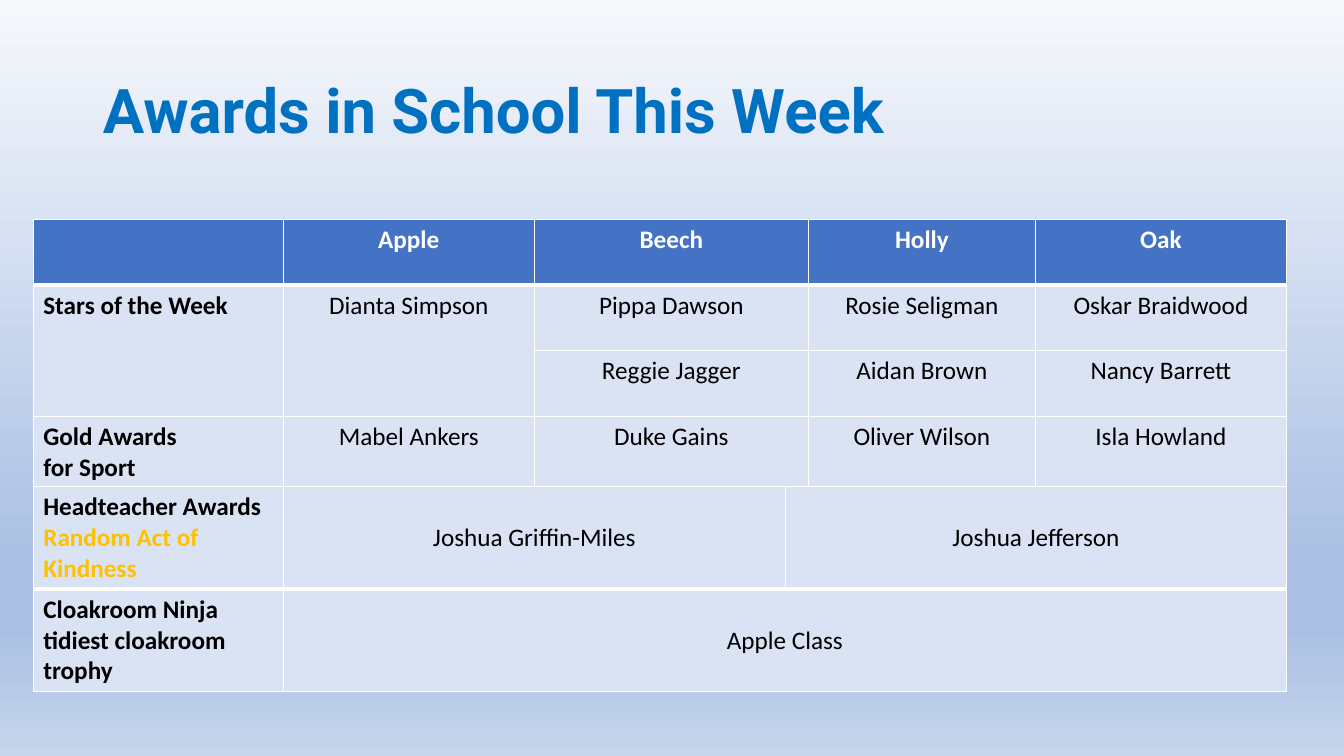
from copy import deepcopy

from lxml.etree import SubElement
from pptx import Presentation
from pptx.dml.color import RGBColor
from pptx.enum.text import MSO_ANCHOR, PP_ALIGN
from pptx.oxml.ns import qn
from pptx.util import Inches, Pt


class Theme:
    title_font, body_font = "Roboto", "Calibri"
    title_size, body_size = Pt(44), Pt(18)
    title, header, body = "0070C0", "4472C4", "DAE3F3"
    text, accent, white = "000000", "FFC000", "FFFFFF"
    background = [(0, "F6F8FC"), (0.74, "ABC0E4"), (0.83, "ABC0E4"), (1, "C7D5ED")]


def add_grid(slide, top, column_widths, row_heights):
    """Add an unbanded table at the shared left edge."""
    frame = slide.shapes.add_table(
        len(row_heights), len(column_widths), Inches(0.33), Inches(top),
        Inches(sum(column_widths)), Inches(sum(row_heights)))
    table = frame.table
    table.horz_banding = False
    for column, width in zip(table.columns, column_widths):
        column.width = Inches(width)
    for row, height in zip(table.rows, row_heights):
        row.height = Inches(height)
    return table


def format_cell(cell, text, fill, color, bold, centered, bottom_width=1):
    """Write the text of a cell and set its borders, fill and font."""
    properties = cell._tc.get_or_add_tcPr()
    for side, width in (("L", 1), ("R", 1), ("T", 1), ("B", bottom_width)):
        line = SubElement(properties, qn(f"a:ln{side}"), w=str(Pt(width)))
        line_fill = SubElement(line, qn("a:solidFill"))
        SubElement(line_fill, qn("a:srgbClr"), val=Theme.white)
    cell.fill.solid()
    cell.fill.fore_color.rgb = RGBColor.from_string(fill)
    cell.text = text
    for paragraph in cell.text_frame.paragraphs:
        paragraph.alignment = PP_ALIGN.CENTER if centered else PP_ALIGN.LEFT
        paragraph.font.name = Theme.body_font
        paragraph.font.size = Theme.body_size
        paragraph.font.bold = bold
        paragraph.font.color.rgb = RGBColor.from_string(color)


presentation = Presentation()
presentation.slide_width = Inches(13.33)
presentation.slide_height = Inches(7.5)
slide = presentation.slides.add_slide(presentation.slide_layouts[5])

# Background gradient, from top to bottom
background = slide.background.fill
background.gradient()
background.gradient_angle = 270
stop_list = slide.element.find(".//" + qn("a:gsLst"))
while len(stop_list) < len(Theme.background):
    stop_list.append(deepcopy(stop_list[0]))
for stop, (position, color) in zip(background.gradient_stops, Theme.background):
    stop.position = position
    stop.color.rgb = RGBColor.from_string(color)

# Title
title = slide.shapes.title
title.left, title.top = Inches(0.92), Inches(0.4)
title.width, title.height = Inches(11.5), Inches(1.45)
title.text_frame.text = "Awards in School This Week"
title.text_frame.vertical_anchor = MSO_ANCHOR.MIDDLE
paragraph = title.text_frame.paragraphs[0]
paragraph.alignment = PP_ALIGN.LEFT
paragraph.line_spacing = 0.9
paragraph.font.name = Theme.title_font
paragraph.font.size = Theme.title_size
paragraph.font.bold = True
paragraph.font.color.rgb = RGBColor.from_string(Theme.title)

# Awards by class
class_awards = [
    ["", "Apple", "Beech", "Holly", "Oak"],
    ["Stars of the Week", "Dianta Simpson", "Pippa Dawson", "Rosie Seligman", "Oskar Braidwood"],
    ["", "", "Reggie Jagger", "Aidan Brown", "Nancy Barrett"],
    ["Gold Awards\nfor Sport", "Mabel Ankers", "Duke Gains", "Oliver Wilson", "Isla Howland"],
]
class_table = add_grid(slide, 2.18, [2.48, 2.49, 2.72, 2.25, 2.49], [0.65, 0.65, 0.65, 0.7])
for row_index, row in enumerate(class_awards):
    is_header = row_index == 0
    for column_index, text in enumerate(row):
        format_cell(
            class_table.cell(row_index, column_index), text,
            fill=Theme.header if is_header else Theme.body,
            color=Theme.white if is_header else Theme.text,
            bold=is_header or column_index == 0,
            centered=column_index > 0,
            bottom_width=3 if is_header else 1)
for column_index in (0, 1):
    class_table.cell(1, column_index).merge(class_table.cell(2, column_index))

# Awards for the whole school
school_awards = [
    ["Headteacher Awards ", "Joshua Griffin-Miles", "Joshua Jefferson"],
    ["Cloakroom Ninja tidiest cloakroom trophy", "Apple Class", ""],
]
school_table = add_grid(slide, 4.83, [2.48, 4.98, 4.97], [1.01, 1.01])
for row_index, row in enumerate(school_awards):
    for column_index, text in enumerate(row):
        cell = school_table.cell(row_index, column_index)
        format_cell(cell, text, Theme.body, Theme.text, bold=column_index == 0,
                    centered=column_index > 0, bottom_width=3 if row_index == 0 else 1)
        if column_index > 0:
            cell.vertical_anchor = MSO_ANCHOR.MIDDLE
school_table.cell(1, 1).merge(school_table.cell(1, 2))
kindness = school_table.cell(0, 0).text_frame.paragraphs[0].add_run()
kindness.text = "Random Act of Kindness"
kindness.font.color.rgb = RGBColor.from_string(Theme.accent)

presentation.save("out.pptx")
